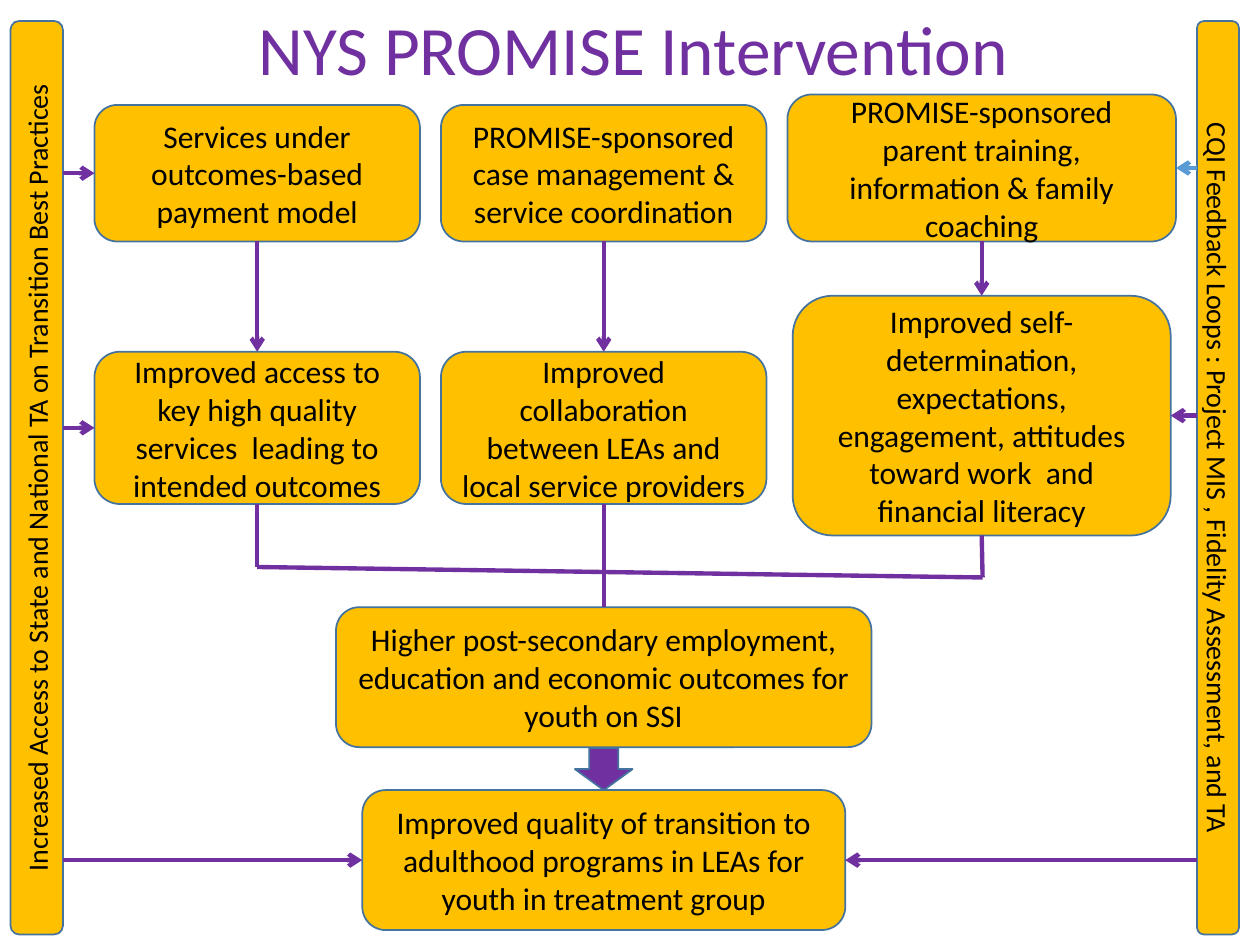
from pptx import Presentation
from pptx.dml.color import RGBColor
from pptx.enum.shapes import MSO_CONNECTOR, MSO_SHAPE
from pptx.enum.text import MSO_ANCHOR, PP_ALIGN
from pptx.oxml.ns import qn
from pptx.util import Pt
from lxml.etree import SubElement

COLORS = {
    "box": "FFC000",
    "outline": "43739E",
    "purple": "7030A0",
    "blue": "5B9BD5",
    "text": "000000",
}
TOP, LEFT, BOTTOM, RIGHT = range(4)


class Diagram:
    font_name = "Calibri"
    line_width = 2.5

    def __init__(self, slide):
        self.slide = slide

    def color(self, name):
        return RGBColor.from_string(COLORS[name])

    def set_text(self, shape, text, size, color="text"):
        frame = shape.text_frame
        frame.word_wrap = True
        frame.vertical_anchor = MSO_ANCHOR.MIDDLE
        paragraph = frame.paragraphs[0]
        paragraph.text = text
        paragraph.alignment = PP_ALIGN.CENTER
        paragraph.font.name = self.font_name
        paragraph.font.size = Pt(size)
        paragraph.font.color.rgb = self.color(color)
        return paragraph

    def title(self, text, left, top, width, height):
        shape = self.slide.shapes.add_textbox(Pt(left), Pt(top), Pt(width), Pt(height))
        self.set_text(shape, text, 39.6, "purple").line_spacing = 0.9

    def shape(self, kind, left, top, width, height, fill):
        shape = self.slide.shapes.add_shape(kind, Pt(left), Pt(top), Pt(width), Pt(height))
        shape.shadow.inherit = False
        shape.fill.solid()
        shape.fill.fore_color.rgb = self.color(fill)
        shape.line.color.rgb = self.color("outline")
        shape.line.width = Pt(1)
        return shape

    def box(self, text, left, top, width, height, size=18):
        shape = self.shape(MSO_SHAPE.ROUNDED_RECTANGLE, left, top, width, height, "box")
        self.set_text(shape, text, size)
        return shape

    def side_bar(self, text, left, width, direction):
        shape = self.box(text, left, 12, width, 522, 16)
        shape.text_frame._txBody.bodyPr.set("vert", direction)

    def down_arrow(self, left, top, width, height):
        self.shape(MSO_SHAPE.DOWN_ARROW, left, top, width, height, "purple")

    def line(self, start, end, begin=None, finish=None, arrow=False, color="purple"):
        connector = self.slide.shapes.add_connector(
            MSO_CONNECTOR.STRAIGHT, *(Pt(value) for value in (*start, *end))
        )
        connector.line.color.rgb = self.color(color)
        connector.line.width = Pt(self.line_width)
        if arrow:
            SubElement(connector.line._get_or_add_ln(), qn("a:tailEnd"), type="arrow")
        SubElement(connector._element.spPr, qn("a:effectLst"))
        if begin:
            connector.begin_connect(*begin)
        if finish:
            connector.end_connect(*finish)

    def side_arrow(self, bar_edge, box, side, color="purple"):
        middle = (box.top + box.height / 2) / Pt(1)
        edge = (box.left if side == LEFT else box.left + box.width) / Pt(1)
        self.line((bar_edge, middle), (edge, middle), finish=(box, side), arrow=True, color=color)


def main():
    presentation = Presentation()
    presentation.slide_width, presentation.slide_height = Pt(720), Pt(540)
    slide = presentation.slides.add_slide(presentation.slide_layouts[6])
    diagram = Diagram(slide)

    diagram.title("NYS PROMISE Intervention", 65, 6, 594, 48)
    diagram.side_bar(
        "Increased Access to State and National TA on Transition Best Practices", 6, 30, "vert270"
    )
    diagram.side_bar(
        "CQI Feedback Loops : Project MIS , Fidelity Assessment, and TA", 684, 24, "vert"
    )

    services = diagram.box("Services under outcomes-based payment model", 54, 60, 186, 78)
    case_management = diagram.box(
        "PROMISE-sponsored case management & service coordination", 252, 60, 186, 78
    )
    training = diagram.box(
        "PROMISE-sponsored parent training, information & family coaching", 450, 54, 222, 84
    )
    access = diagram.box(
        "Improved access to key high quality services  leading to intended outcomes",
        54, 201, 186, 87,
    )
    collaboration = diagram.box(
        "Improved collaboration between LEAs and local service providers ", 252, 201, 186, 87
    )
    attitudes = diagram.box(
        "Improved self-determination, expectations, engagement, attitudes toward work  and "
        "financial literacy",
        453, 169, 216, 137,
    )
    outcomes = diagram.box(
        "Higher post-secondary employment, education and economic outcomes for youth on SSI",
        192, 347, 306, 80,
    )
    quality = diagram.box(
        "Improved quality of transition to adulthood programs in LEAs for youth in treatment group",
        207, 451.5, 276, 80,
    )
    diagram.down_arrow(328.5, 427.5, 33, 24)

    for center, upper, lower, lower_top in (
        (147, services, access, 201),
        (345, case_management, collaboration, 201),
        (561, training, attitudes, 169),
    ):
        diagram.line(
            (center, 138), (center, lower_top), (upper, BOTTOM), (lower, TOP), arrow=True
        )

    for box in (services, access, quality):
        diagram.side_arrow(36, box, LEFT)
    for box, color in ((training, "blue"), (attitudes, "purple"), (quality, "purple")):
        diagram.side_arrow(684, box, RIGHT, color)

    left_joint, right_joint = (147, 324), (561.5, 330)
    diagram.line((147, 288), left_joint, (access, BOTTOM))
    diagram.line((345, 288), (345, 347), (collaboration, BOTTOM), (outcomes, TOP))
    diagram.line((561, 306), right_joint, (attitudes, BOTTOM))
    diagram.line(left_joint, right_joint)

    presentation.save("out.pptx")


if __name__ == "__main__":
    main()
